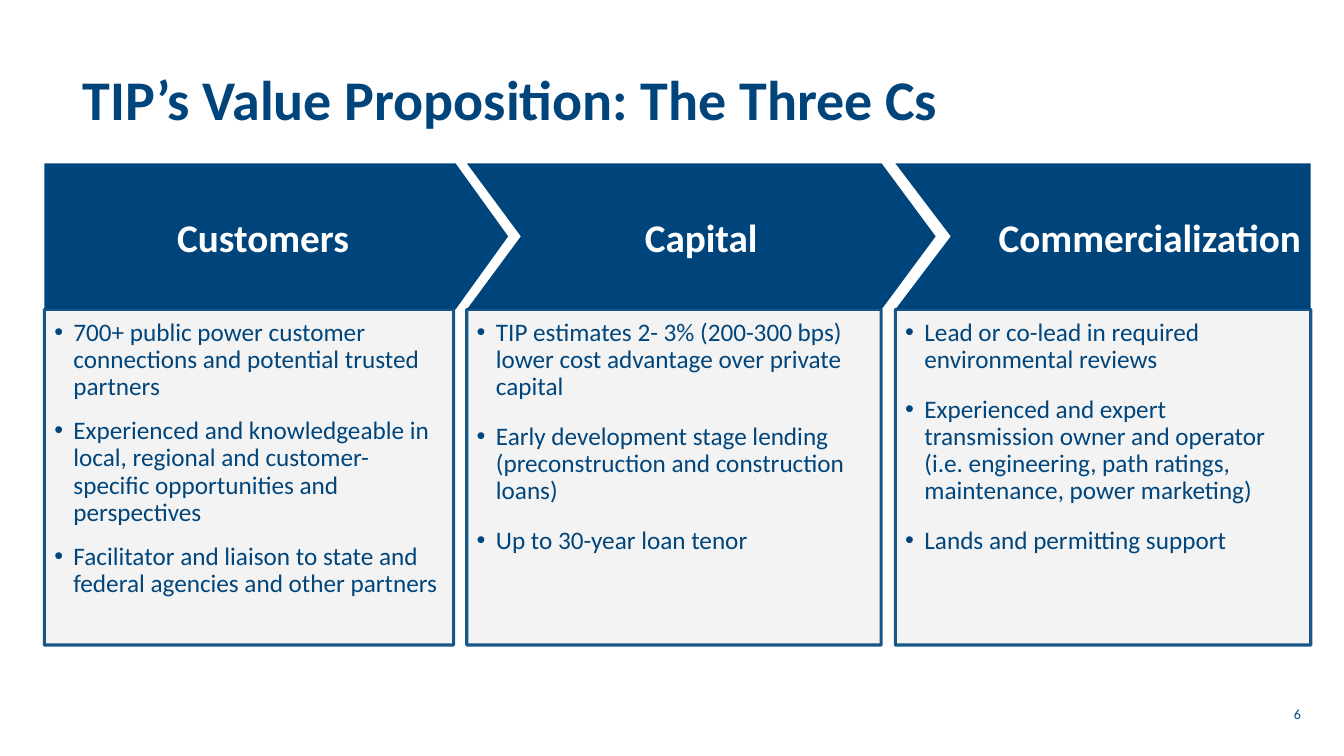
from lxml.etree import SubElement
from pptx import Presentation
from pptx.dml.color import RGBColor
from pptx.enum.shapes import MSO_SHAPE as Preset
from pptx.enum.text import MSO_ANCHOR as Anchor, PP_ALIGN as Align
from pptx.oxml.ns import qn
from pptx.util import Inches, Pt

NAVY = RGBColor(0x00, 0x44, 0x7C)
INK = RGBColor(0x00, 0x45, 0x7B)
PALE = RGBColor(0xF2, 0xF2, 0xF2)
WHITE = RGBColor(0xFF, 0xFF, 0xFF)

BAND_TOP, BAND_HEIGHT, PANEL_HEIGHT = 1.62, 1.45, 3.33
NOTCH = 0.55

COLUMNS = [
    {"heading": "Customers", "left": 0.44, "band": 4.6, "panel": 4.06,
     "preset": Preset.PENTAGON, "point": 0.36, "align": Align.CENTER, "gap": 12,
     "benefits": [
         "700+ public power customer connections and potential trusted partners",
         "Experienced and knowledgeable in local, regional and customer-specific "
         "opportunities and perspectives",
         "Facilitator and liaison to state and federal agencies and other partners"]},
    {"heading": "Capital", "left": 4.63, "band": 4.65, "panel": 4.11,
     "preset": Preset.CHEVRON, "point": 0.37, "align": Align.CENTER, "gap": 16,
     "benefits": [
         "TIP estimates 2- 3% (200-300 bps) lower cost advantage over private capital",
         "Early development stage lending (preconstruction and construction loans)",
         "Up to 30-year loan tenor"]},
    {"heading": "Commercialization", "left": 8.88, "band": 4.12, "panel": 4.12,
     "preset": None, "point": None, "align": Align.RIGHT, "gap": 16,
     "benefits": [
         "Lead or co-lead in required environmental reviews",
         "Experienced and expert transmission owner and operator (i.e. engineering, "
         "path ratings, maintenance, power marketing)",
         "Lands and permitting support"]},
]


def apply_format(target, values):
    """Set each named attribute on the target."""
    for name, value in values.items():
        setattr(target, name, value)


def write(paragraph, words, size, color, bold=False):
    """Add one formatted run to a paragraph."""
    run = paragraph.add_run()
    run.text = words
    apply_format(run.font, {"name": "Calibri", "size": Pt(size), "bold": bold})
    run.font.color.rgb = color


def paint(shape, color):
    """Give a shape a flat fill without shadow."""
    shape.shadow.inherit = False
    shape.fill.solid()
    shape.fill.fore_color.rgb = color


def soften(properties):
    """Make every colour in the shape properties 90 percent opaque."""
    for color in properties.iter(qn("a:srgbClr")):
        SubElement(color, qn("a:alpha"), val="90000")


def notched_band(slide, left, top, width, height):
    """Draw a band with a flat right end and a notch on its left."""
    right, bottom = left + width, top + height
    outline = slide.shapes.build_freeform(Inches(left), Inches(top))
    corners = [(right, top), (right, bottom), (left, bottom),
               (left + NOTCH, top + height / 2)]
    outline.add_line_segments([(Inches(x), Inches(y)) for x, y in corners], close=True)
    return outline.convert_to_shape()


def add_heading(slide, column, left, top, width, height):
    """Place the coloured band with the column's heading."""
    if column["preset"] is None:
        band = notched_band(slide, left, top, width, height)
    else:
        band = slide.shapes.add_shape(column["preset"], Inches(left), Inches(top),
                                      Inches(width), Inches(height))
        band.adjustments[0] = column["point"]
    paint(band, NAVY)
    band.line.fill.background()
    apply_format(band.text_frame, {"vertical_anchor": Anchor.MIDDLE, "word_wrap": True})
    paragraph = band.text_frame.paragraphs[0]
    paragraph.alignment = column["align"]
    write(paragraph, column["heading"], 28, WHITE, True)


def add_benefits(slide, column, left, top, width, height):
    """Place the bordered panel with the column's bullet list."""
    panel = slide.shapes.add_shape(Preset.RECTANGLE, Inches(left), Inches(top),
                                   Inches(width), Inches(height))
    paint(panel, PALE)
    panel.line.color.rgb = NAVY
    panel.line.width = Pt(2.25)
    soften(panel.element.spPr)
    frame = panel.text_frame
    apply_format(frame, {
        "word_wrap": True, "vertical_anchor": Anchor.TOP,
        "margin_left": Inches(0.1), "margin_top": Inches(0.1),
        "margin_right": Inches(0.14), "margin_bottom": Inches(0.16)})
    for index, benefit in enumerate(column["benefits"]):
        paragraph = frame.add_paragraph() if index else frame.paragraphs[0]
        properties = paragraph._p.get_or_add_pPr()
        properties.set("marL", str(Inches(0.19)))
        properties.set("indent", str(-Inches(0.19)))
        SubElement(properties, qn("a:buFont"), typeface="Arial")
        SubElement(properties, qn("a:buChar"), char="•")
        apply_format(paragraph, {"level": 1, "alignment": Align.LEFT, "line_spacing": 0.9,
                                 "space_after": Pt(column["gap"])})
        write(paragraph, benefit, 18, INK)


def add_title(slide, left, top, width, height):
    """Place the slide title in its placeholder."""
    title = slide.shapes.title
    apply_format(title, {"left": Inches(left), "top": Inches(top),
                         "width": Inches(width), "height": Inches(height)})
    apply_format(title.text_frame, {"vertical_anchor": Anchor.MIDDLE, "word_wrap": True})
    paragraph = title.text_frame.paragraphs[0]
    apply_format(paragraph, {"alignment": Align.LEFT, "line_spacing": 0.9})
    write(paragraph, "TIP’s Value Proposition: The Three Cs", 40, NAVY, True)


def add_page_number(slide, left, top, width, height):
    """Place the page number at the lower right."""
    number = slide.shapes.add_textbox(Inches(left), Inches(top), Inches(width), Inches(height))
    number.text_frame.word_wrap = True
    paragraph = number.text_frame.paragraphs[0]
    paragraph.alignment = Align.RIGHT
    write(paragraph, "6", 10, INK)


def main():
    """Build the slide and save it."""
    deck = Presentation()
    apply_format(deck, {"slide_width": Inches(13.33), "slide_height": Inches(7.5)})
    slide = deck.slides.add_slide(deck.slide_layouts[5])
    add_title(slide, 0.72, 0.29, 11.5, 1.45)
    for column in COLUMNS:
        add_heading(slide, column, column["left"], BAND_TOP, column["band"], BAND_HEIGHT)
        add_benefits(slide, column, column["left"], BAND_TOP + BAND_HEIGHT,
                     column["panel"], PANEL_HEIGHT)
    add_page_number(slide, 12.42, 6.95, 0.58, 0.4)
    deck.save("out.pptx")


if __name__ == "__main__":
    main()
